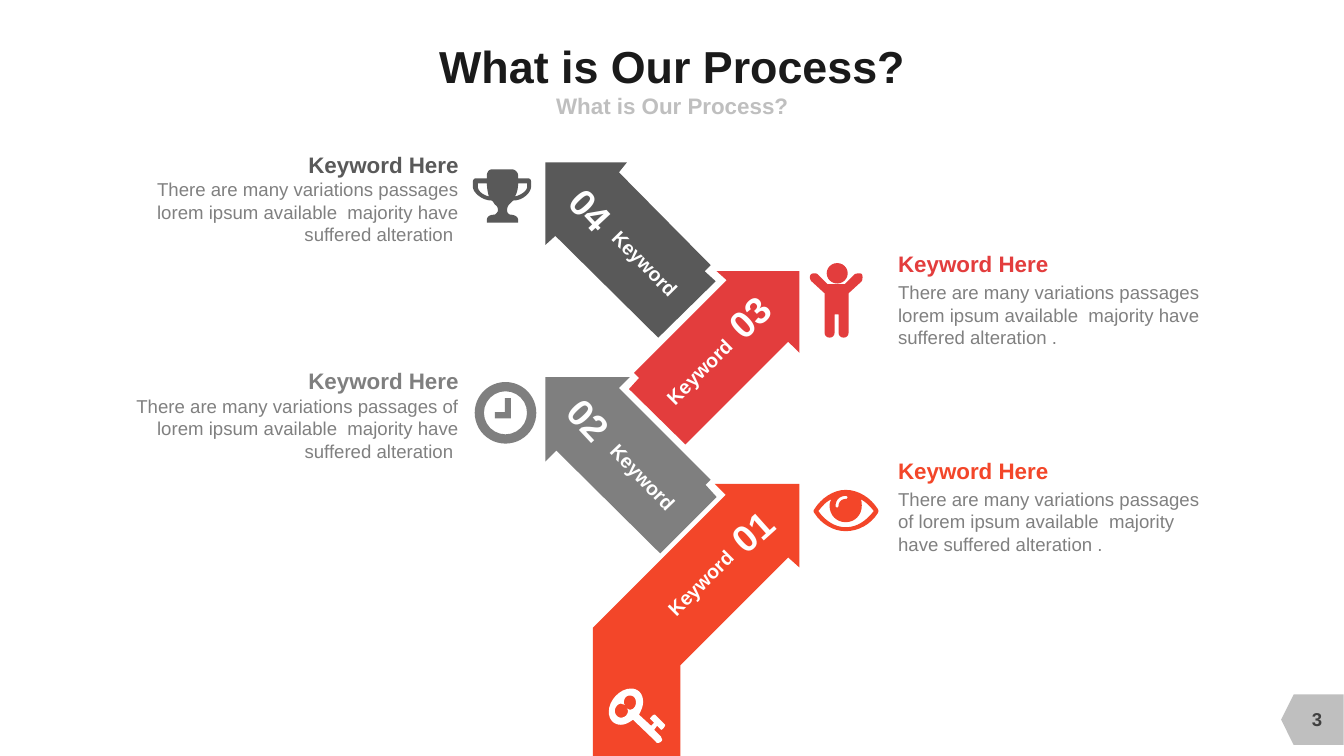
from pptx import Presentation
from pptx.dml.color import RGBColor
from pptx.enum.shapes import MSO_SHAPE
from pptx.enum.text import MSO_ANCHOR, PP_ALIGN
from pptx.util import Pt

LEFT, CENTER, RIGHT = PP_ALIGN.LEFT, PP_ALIGN.CENTER, PP_ALIGN.RIGHT
TOP, MIDDLE, BOTTOM = MSO_ANCHOR.TOP, MSO_ANCHOR.MIDDLE, MSO_ANCHOR.BOTTOM
OVAL, DONUT = MSO_SHAPE.OVAL, MSO_SHAPE.DONUT
PAGE_TAG = MSO_SHAPE.FLOWCHART_OFFPAGE_CONNECTOR

COLORS = {
    "orange": "F34629", "gray": "7F7F7F", "red": "E33D3D", "dark": "595959",
    "white": "FFFFFF", "silver": "BFBFBF", "title": "1A1A1A",
    "body": "808080", "number": "404040",
}
TITLE = "What is Our Process?"
HEADING = "Keyword Here"
LABEL = "Keyword"
RIGHT_TEXT_LEFT, LEFT_TEXT_RIGHT = 641.5, 327.6
HEADING_SIZE = (108.7, 19.4)
NUMBER_SIZE = (30.2, 32.4)
LABEL_SIZE = (59.8, 17.3)

# Number and label: left, top, rotation. Copy: width, heading top, body top.
STEPS = [
    {"number": "01", "color": "orange", "side": RIGHT,
     "arrow": [(571, 405.4), (563, 398.2), (486, 475.2), (486, 540), (423.4, 540),
               (423.4, 448.6), (518.4, 353.5), (510.5, 345.6), (571, 345.6)],
     "number_at": (522, 362.9, 318.1), "label_at": (470.2, 408.2, 315),
     "copy_at": (225.4, 326.9, 348.5),
     "copy": "There are many variations passages of lorem ipsum available  majority have suffered alteration ."},
    {"number": "04", "color": "dark", "side": LEFT,
     "arrow": [(442.1, 123.1), (507.6, 189.4), (503.3, 193.7), (511.2, 200.9),
               (470.2, 241.2), (396.7, 168.5), (389.5, 175), (389.5, 116), (447.8, 116)],
     "number_at": (407.5, 133.2, 47), "label_at": (430.6, 179.3, 45.4),
     "copy_at": (220.3, 108, 127.4),
     "copy": "There are many variations passages lorem ipsum available  majority have suffered alteration "},
    {"number": "02", "color": "gray", "side": LEFT,
     "arrow": [(442.1, 277.2), (507.6, 342.7), (504, 346.3), (511.9, 355),
               (471.6, 395.3), (397.4, 321.8), (389.5, 329.8), (389.5, 269.3), (450, 269.3)],
     "number_at": (406.1, 283, 47), "label_at": (429.1, 331.9, 46.4),
     "copy_at": (239, 262.1, 282.2),
     "copy": "There are many variations passages of lorem ipsum available  majority have suffered alteration "},
    {"number": "03", "color": "red", "side": RIGHT,
     "arrow": [(571, 252), (563, 244.1), (489.6, 317.5), (449.3, 277.9), (456.5, 270),
               (452.9, 266.4), (519.1, 200.2), (511.9, 193.7), (571, 193.7)],
     "number_at": (519.8, 209.5, 316.6), "label_at": (469.4, 257, 315),
     "copy_at": (225.4, 178.6, 200.9),
     "copy": "There are many variations passages lorem ipsum available  majority have suffered alteration ."},
]

# Each contour lists corners (x, y) and curves (control, control, end).
KEY = [
    [(472.3, 521.3), (469.4, 518.4), (467.3, 521.3), (472.3, 526.3),
     (472.3, 527, 473, 527.8, 473, 528.5), (473, 529.2, 471.6, 530.6, 470.2, 530.6),
     (469.4, 530.6, 468.7, 530.6, 468.7, 529.9), (452.2, 514.1),
     (450, 515.5, 447.1, 517.7, 443.5, 517.7), (438.5, 517.7, 434.9, 514.1, 434.9, 508.3),
     (434.9, 500.4, 442.8, 491.8, 450.7, 491.8), (455.8, 491.8, 459.4, 495.4, 459.4, 501.1),
     (459.4, 504.7, 457.9, 507.6, 456.5, 510.5), (465.1, 518.4), (467.3, 516.2),
     (464.4, 513.4), (464.4, 512.6, 466.6, 510.5, 467.3, 510.5), (468, 510.5),
     (475.2, 517.7), (475.2, 519.1, 473, 521.3, 472.3, 521.3)],
    [(450, 496.8), (447.1, 496.8, 445.7, 499, 445.7, 501.8),
     (445.7, 502.6, 445.7, 502.6, 446.4, 503.3), (445, 503.3, 444.2, 502.6, 443.5, 502.6),
     (441.4, 502.6, 439.2, 505.4, 439.2, 507.6), (439.2, 510.5, 441.4, 512.6, 443.5, 512.6),
     (446.4, 512.6, 448.6, 510.5, 448.6, 507.6), (448.6, 506.9, 448.6, 506.9, 447.8, 506.2),
     (448.6, 506.2, 449.3, 506.9, 450, 506.9), (452.9, 506.9, 454.3, 504, 454.3, 501.8),
     (454.3, 499, 452.9, 496.8, 450, 496.8)],
]
EYE = [
    [(627.1, 366.5), (622.1, 374.4, 613.4, 379.4, 604.1, 379.4),
     (595.4, 379.4, 586.8, 374.4, 581.8, 366.5), (581, 365.6, 581, 364.4, 581.8, 363.6),
     (586.8, 355.7, 595.4, 349.9, 604.1, 349.9), (613.4, 349.9, 622.1, 355.7, 627.1, 363.6),
     (627.6, 364.4, 627.6, 365.6, 627.1, 366.5)],
    [(614.2, 356.4), (615.6, 357.1, 615.6, 359.3, 615.6, 361.4),
     (615.6, 367.9, 610.6, 373, 604.1, 373), (597.6, 373, 592.6, 367.9, 592.6, 361.4),
     (592.6, 359.3, 593.3, 357.1, 594.7, 356.4), (590.4, 357.8, 587.5, 361.4, 584.6, 365),
     (589, 371.5, 596.2, 376.6, 604.1, 376.6), (612.7, 376.6, 619.2, 371.5, 624.2, 365),
     (621.4, 361.4, 617.8, 357.8, 614.2, 356.4)],
    [(604.1, 354.2), (599.8, 354.2, 596.9, 357.1, 596.9, 361.4),
     (596.9, 362.9, 599, 362.9, 599, 361.4), (599, 358.6, 601.2, 356.4, 604.1, 356.4),
     (605.9, 356.4, 605.9, 354.2, 604.1, 354.2)],
]
PERSON_BODY = [
    [(606.2, 209.5), (606.2, 237.6), (606.2, 242.4, 599, 242.4, 599, 237.6),
     (599, 224.6), (596.2, 224.6), (596.2, 237.6), (596.2, 242.4, 589, 242.4, 589, 237.6),
     (589, 209.5), (579.6, 200.9), (578.2, 199.4, 578.2, 196.6, 579.6, 195.8),
     (580.3, 195.1, 583.2, 195.1, 583.9, 195.8), (591.1, 203), (603.4, 203), (610.6, 195.8),
     (612.7, 195.1, 614.9, 195.1, 615.6, 195.8), (616.3, 196.6, 616.3, 199.4, 615.6, 200.9)],
]
TROPHY = [
    [(379.4, 133.2), (379.4, 137.5, 373.7, 143.3, 366.5, 143.3),
     (365, 144.7, 363.6, 146.2, 363.6, 146.2), (362.9, 146.9, 362.2, 148.3, 362.2, 150.5),
     (362.2, 151.2, 362.9, 153.4, 365, 153.4), (367.2, 153.4, 370.1, 154.8, 370.1, 157),
     (370.1, 159.1), (347.8, 159.1), (347.8, 157), (347.8, 154.8, 350, 153.4, 352.8, 153.4),
     (354.2, 153.4, 355.7, 151.2, 355.7, 150.5), (355.7, 148.3, 355, 146.9, 353.5, 146.2),
     (353.5, 146.2, 352.8, 144.7, 351.4, 143.3), (344.2, 143.3, 337.7, 137.5, 337.7, 133.2),
     (337.7, 130.3), (337.7, 128.2, 339.1, 127.4, 339.8, 127.4), (347.8, 127.4),
     (347.8, 125.3), (347.8, 123.1, 349.2, 121, 351.4, 121), (365.8, 121),
     (367.9, 121, 370.1, 123.1, 370.1, 125.3), (370.1, 127.4), (376.6, 127.4),
     (378.7, 127.4, 379.4, 128.2, 379.4, 130.3)],
    [(347.8, 131), (341.3, 131), (341.3, 133.2), (341.3, 136.1, 344.2, 139, 349.2, 140.4),
     (348.5, 137.5, 347.8, 134.6, 347.8, 131)],
    [(376.6, 131), (370.1, 131), (370.1, 134.6, 369.4, 137.5, 367.9, 140.4),
     (373, 139, 376.6, 136.1, 376.6, 133.2)],
]
CLOCK_HANDS = [[(360.7, 284.4), (365, 284.4), (365, 298.8), (353.5, 298.8),
                (353.5, 294.5), (360.7, 294.5)]]
CURVE_STEPS = 8


def paint(shape, color):
    shape.shadow.inherit = False
    shape.fill.solid()
    shape.fill.fore_color.rgb = RGBColor.from_string(COLORS[color])
    shape.line.fill.background()


def add_preset(page, kind, color, left, top, width, height):
    shape = page.shapes.add_shape(kind, Pt(left), Pt(top), Pt(width), Pt(height))
    paint(shape, color)
    return shape


def flatten(contour):
    """Turn corners and cubic curves into a list of EMU points."""
    points = [contour[0]]
    for part in contour[1:]:
        if len(part) == 2:
            points.append(part)
            continue
        knots = [points[-1], part[:2], part[2:4], part[4:]]
        for step in range(1, CURVE_STEPS + 1):
            t = step / CURVE_STEPS
            weights = ((1 - t) ** 3, 3 * t * (1 - t) ** 2, 3 * t * t * (1 - t), t ** 3)
            points.append(tuple(sum(w * knot[axis] for w, knot in zip(weights, knots))
                                for axis in (0, 1)))
    return [(Pt(x), Pt(y)) for x, y in points]


def add_outline(page, contours, color):
    first, *holes = [flatten(contour) for contour in contours]
    builder = page.shapes.build_freeform(*first[0], scale=1.0)
    builder.add_line_segments(first[1:], close=True)
    for hole in holes:
        builder.move_to(*hole[0])
        builder.add_line_segments(hole[1:], close=True)
    paint(builder.convert_to_shape(), color)


def add_text(page, text, area, size, color, bold=True, align=CENTER,
             anchor=MIDDLE, wrap=False, rotation=0):
    box = page.shapes.add_textbox(*(Pt(value) for value in area))
    box.rotation = rotation
    frame = box.text_frame
    frame.margin_left = frame.margin_right = frame.margin_top = frame.margin_bottom = 0
    frame.word_wrap = wrap
    frame.vertical_anchor = anchor
    frame.text = text
    para = frame.paragraphs[0]
    para.alignment = align
    font = para.runs[0].font
    font.name, font.size, font.bold = "Arial", Pt(size), bold
    font.color.rgb = RGBColor.from_string(COLORS[color])


def add_copy(page, step):
    width, heading_top, body_top = step["copy_at"]
    on_right = step["side"] == RIGHT
    align = LEFT if on_right else RIGHT

    def left_for(box_width):
        return RIGHT_TEXT_LEFT if on_right else LEFT_TEXT_RIGHT - box_width

    add_text(page, step["copy"], (left_for(width), body_top, width, 48.2), 13.3, "body",
             bold=False, align=align, anchor=TOP, wrap=True)
    add_text(page, HEADING, (left_for(HEADING_SIZE[0]), heading_top, *HEADING_SIZE), 16,
             step["color"], align=align, anchor=TOP)


def main():
    deck = Presentation()
    deck.slide_width, deck.slide_height = Pt(960), Pt(540)
    page = deck.slides.add_slide(deck.slide_layouts[6])

    add_preset(page, PAGE_TAG, "silver", 919.4, 491.8, 36, 44.6).rotation = 90
    add_text(page, TITLE, (184.3, 28.1, 591.8, 37.4), 32, "title")
    add_text(page, TITLE, (264.2, 64.8, 432, 20.9), 16, "silver", wrap=True)
    add_text(page, "3", (916.6, 499, 48.2, 28.8), 13.3, "number", wrap=True)

    for step in STEPS:
        add_outline(page, [step["arrow"]], step["color"])
    for step in STEPS:
        for text, size, spot, font_size, align, anchor in (
                (step["number"], NUMBER_SIZE, step["number_at"], 26.6, CENTER, BOTTOM),
                (LABEL, LABEL_SIZE, step["label_at"], 14, RIGHT, TOP)):
            add_text(page, text, (*spot[:2], *size), font_size, "white",
                     align=align, anchor=anchor, rotation=spot[2])
        add_copy(page, step)

    for contours, color in ((KEY, "white"), (EYE, "orange"), (CLOCK_HANDS, "gray"),
                            (PERSON_BODY, "red"), (TROPHY, "dark")):
        add_outline(page, contours, color)
    add_preset(page, DONUT, "gray", 339.1, 272.9, 44, 44).adjustments[0] = 0.15
    add_preset(page, OVAL, "red", 590.5, 187.9, 15, 14.6)
    deck.save("out.pptx")


if __name__ == "__main__":
    main()
